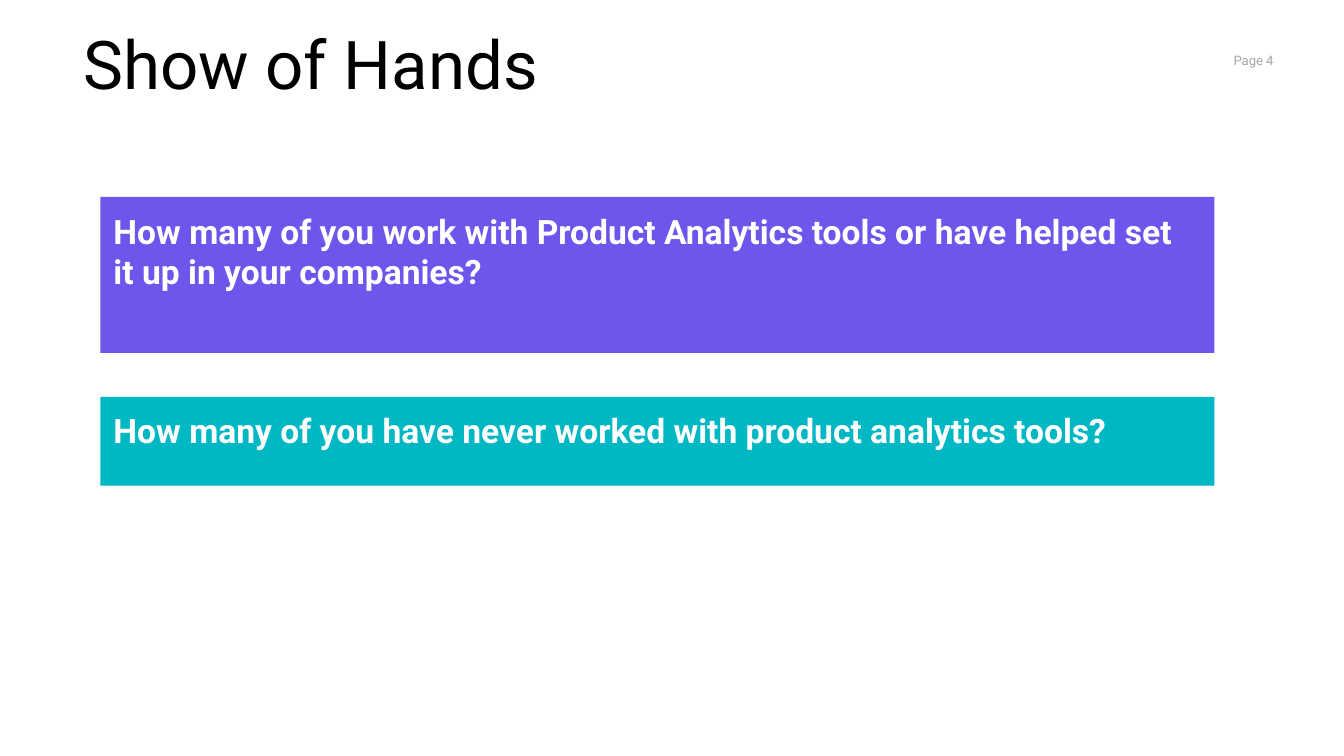
from pptx import Presentation
from pptx import util as u
from pptx.dml.color import RGBColor
from pptx.enum import shapes, text

HUES = {"ink": "000000", "grey": "A5A5A5", "white": "FFFFFF",
        "violet": "6C56EB", "teal": "00B7C4"}
WIDE = 10
HIGH = WIDE * 9 / 16
COLS, ROWS = 100, 56.25  # grid cells of a tenth of an inch


def write(frame, words, size=18, hue="ink", bold=False, pads=(0, 0, 0, 0),
          align=text.PP_ALIGN.LEFT, anchor=text.MSO_ANCHOR.TOP):
    """Fill a text frame with one formatted paragraph."""
    frame.word_wrap = True
    frame.vertical_anchor = anchor
    for side, pad in zip(("left", "top", "right", "bottom"), pads):
        setattr(frame, "margin_" + side, u.Inches(pad))
    para = frame.paragraphs[0]
    para.alignment = align
    run = para.add_run()
    run.text = words
    font = run.font
    font.name, font.size, font.bold = "Roboto", u.Pt(size), bold
    font.color.rgb = RGBColor.from_string(HUES[hue])


class Deck:
    """Holds the style and the current slide."""

    def __init__(self):
        self.prs = Presentation()
        self.prs.slide_width = u.Inches(WIDE)
        self.prs.slide_height = u.Inches(HIGH)
        self.slide = self.prs.slides.add_slide(self.prs.slide_layouts[6])

    def place(self, col, row, cols, rows):
        """Turn grid cells into slide lengths."""
        return (u.Inches(col * WIDE / COLS), u.Inches(row * HIGH / ROWS),
                u.Inches(cols * WIDE / COLS), u.Inches(rows * HIGH / ROWS))

    def label(self, cells, words, **style):
        box = self.slide.shapes.add_textbox(*self.place(*cells))
        write(box.text_frame, words, **style)

    def band(self, cells, words, fill, **style):
        box = self.slide.shapes.add_shape(
            shapes.MSO_SHAPE.RECTANGLE, *self.place(*cells))
        box.shadow.inherit = False
        box.fill.solid()
        box.fill.fore_color.rgb = RGBColor.from_string(HUES[fill])
        box.line.fill.background()
        write(box.text_frame, words, **style)


def main():
    deck = Deck()

    # Page number and title
    deck.label((86.35, 3, 8.4, 3), "Page 4", size=7, hue="grey",
               align=text.PP_ALIGN.RIGHT, anchor=text.MSO_ANCHOR.MIDDLE)
    deck.label((6.2, 1.65, 85.5, 14.1), "Show of Hands", size=36)

    # Question bands, stacked with an equal gap
    asks = [
        ("How many of you work with Product Analytics tools or have helped "
         "set it up in your companies?", "violet", 11.6),
        ("How many of you have never worked with product analytics tools?",
         "teal", 6.6),
    ]
    row, gap = 14.66, 3.28
    for words, fill, rows in asks:
        deck.band((7.46, row, 82.9, rows), words, fill, hue="white",
                  bold=True, pads=(0.1, 0.1, 0.12, 0.1))
        row += rows + gap

    deck.prs.save("out.pptx")


if __name__ == "__main__":
    main()
